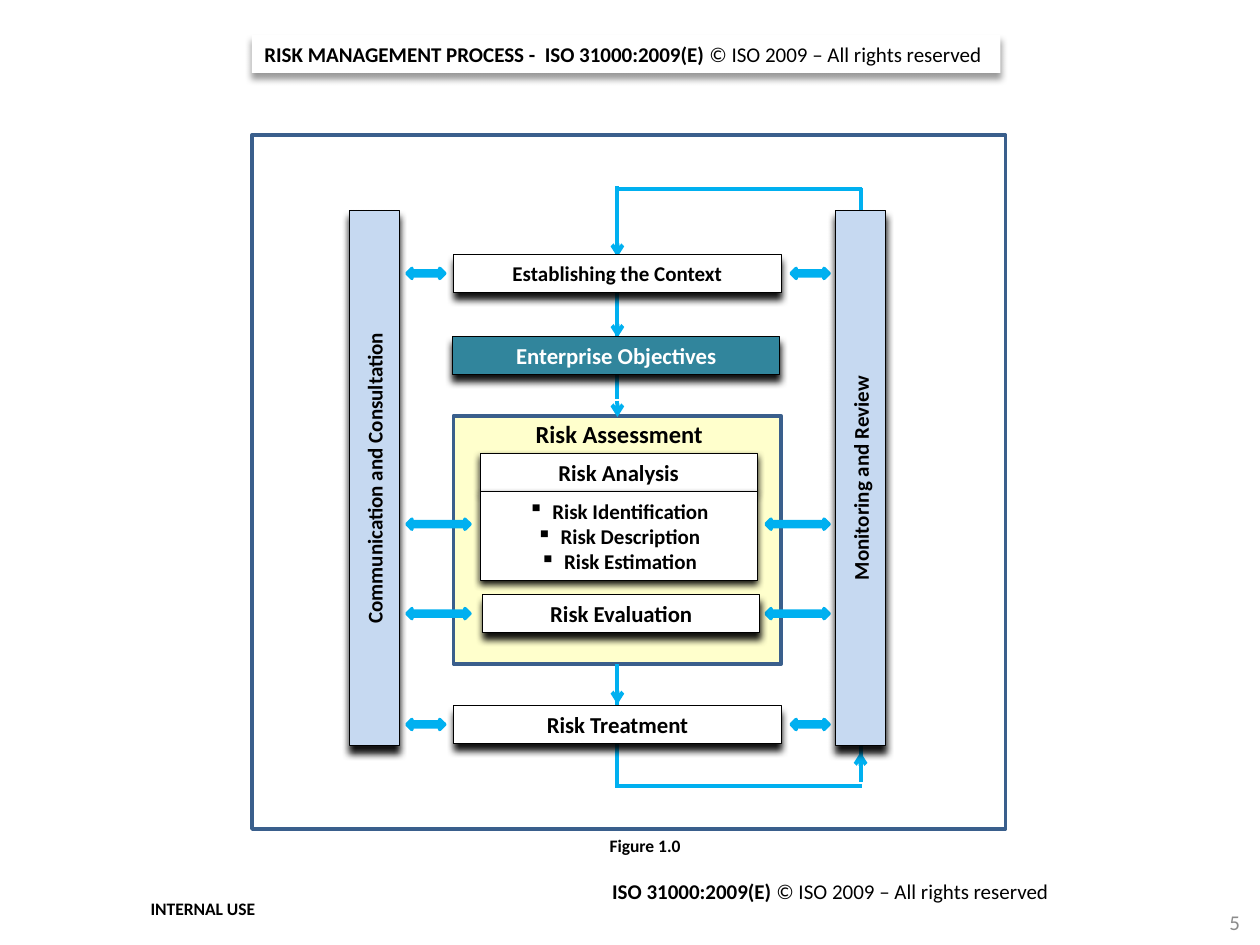
from lxml import etree
from pptx import Presentation
from pptx.dml.color import RGBColor
from pptx.enum.shapes import MSO_CONNECTOR, MSO_SHAPE
from pptx.enum.text import MSO_ANCHOR, PP_ALIGN
from pptx.oxml import parse_xml
from pptx.oxml.ns import nsdecls, qn
from pptx.util import Inches, Pt

RECT, DOUBLE_ARROW = MSO_SHAPE.RECTANGLE, MSO_SHAPE.LEFT_RIGHT_ARROW
STRAIGHT = MSO_CONNECTOR.STRAIGHT
LEFT, CENTER, RIGHT = PP_ALIGN.LEFT, PP_ALIGN.CENTER, PP_ALIGN.RIGHT
TOP, MIDDLE = MSO_ANCHOR.TOP, MSO_ANCHOR.MIDDLE

BLACK = RGBColor(0x00, 0x00, 0x00)
WHITE = RGBColor(0xFF, 0xFF, 0xFF)
GRAY = RGBColor(0x8C, 0x8C, 0x8C)
NAVY = RGBColor(0x3A, 0x5F, 0x8C)
SKY = RGBColor(0x00, 0xB0, 0xF0)
PALE_BLUE = RGBColor(0xC6, 0xD9, 0xF1)
YELLOW = RGBColor(0xFF, 0xFF, 0xCC)
TEAL = RGBColor(0x31, 0x85, 0x9C)

# Content
STANDARD = "ISO 31000:2009(E) "
RIGHTS = "© ISO 2009 – All rights reserved"
TITLE = [("RISK MANAGEMENT PROCESS -  " + STANDARD, True), (RIGHTS, False)]
SOURCE = [(STANDARD, True), (RIGHTS, False)]
ANALYSIS_STEPS = ["Risk Identification", "Risk Description", "Risk Estimation"]

# Plain labels: text, box, size, bold, colour, alignment, anchor
LABELS = [
    ("5", (7.61, 7.12, 2.33, 0.4), 12, False, GRAY, RIGHT, MIDDLE),
    ("INTERNAL USE", (0.38, 7.01, 2.46, 0.4), 10, True, BLACK, CENTER, MIDDLE),
    ("Figure 1.0", (4.52, 6.58, 1.2, 0.27), 10, True, BLACK, CENTER, TOP),
]
FRAMES = [((2, 1.07, 5.98, 5.51), WHITE), ((3.6, 3.3, 2.6, 1.97), YELLOW)]
PILLARS = [("Communication and Consultation", 2.77), ("Monitoring and Review", 6.63)]

# Process boxes: text, box, fill, font colour, size, shadow distance
STEPS = [
    ("Establishing the Context", (3.6, 2.02, 2.6, 0.3), WHITE, BLACK, 12, 4),
    ("Enterprise Objectives", (3.59, 2.67, 2.6, 0.3), TEAL, WHITE, 13, 4),
    ("Risk Analysis", (3.81, 3.6, 2.2, 0.3), WHITE, BLACK, 13, 2),
    ("Risk Evaluation", (3.83, 4.72, 2.2, 0.3), WHITE, BLACK, 13, 4),
    ("Risk Treatment", (3.6, 5.6, 2.6, 0.3), WHITE, BLACK, 13, 4),
]

# Flow lines: x1, y1, x2, y2
FLOW_X, REVIEW_X = 4.9, 6.83
LINES = [
    (FLOW_X, 1.48, FLOW_X, 3.17),
    (FLOW_X, 5.27, FLOW_X, 6.25),
    (REVIEW_X, 1.49, REVIEW_X, 6.21),
    (REVIEW_X + 0.01, 1.5, FLOW_X, 1.5),
    (REVIEW_X + 0.01, 6.24, FLOW_X, 6.24),
]
HEAD = 0.13
ARROWS = [(FLOW_X, tip - HEAD, FLOW_X, tip) for tip in (2.04, 2.68, 3.31, 5.59)]
ARROWS.append((REVIEW_X, 5.97 + HEAD, REVIEW_X, 5.97))

# Two-way arrows between the pillars: top, width
EXCHANGES = [(2.13, 0.3), (4.12, 0.5), (4.83, 0.5), (5.71, 0.3)]
EXCHANGE_LEFT, EXCHANGE_RIGHT = 3.23, 6.58


def add_shadow(sp, alpha, blur, dist):
    effects = sp._element.spPr.find(qn("a:effectLst"))
    effects.append(parse_xml(
        f'<a:outerShdw {nsdecls("a")} blurRad="{Pt(blur)}" dist="{Pt(dist)}" '
        f'dir="5400000" algn="ctr" rotWithShape="0"><a:srgbClr val="000000">'
        f'<a:alpha val="{alpha * 1000}"/></a:srgbClr></a:outerShdw>'))


def add_box(box, fill, line=None, width=0.5, kind=RECT):
    sp = s.shapes.add_shape(kind, *map(Inches, box))
    sp.shadow.inherit = False
    sp.fill.solid()
    sp.fill.fore_color.rgb = fill
    if line is None:
        sp.line.fill.background()
    else:
        sp.line.color.rgb = line
        sp.line.width = Pt(width)
    return sp


def write(sp, paragraphs, size, color=BLACK, align=CENTER, anchor=MIDDLE, wrap=True):
    """Each paragraph is a list of (text, bold) runs."""
    tf = sp.text_frame
    tf.word_wrap, tf.vertical_anchor = wrap, anchor
    font = {"name": "Calibri", "size": Pt(size)}
    for i, runs in enumerate(paragraphs):
        p = tf.paragraphs[0] if i == 0 else tf.add_paragraph()
        p.alignment = align
        for text, bold in runs:
            r = p.add_run()
            r.text = text
            r.font.color.rgb = color
            for key, value in {**font, "bold": bold}.items():
                setattr(r.font, key, value)
    return tf


def add_label(text, box, size, bold, color, align, anchor):
    sp = s.shapes.add_textbox(*map(Inches, box))
    return write(sp, [[(text, bold)]], size, color, align, anchor)


def add_line(ends, arrow=False):
    c = s.shapes.add_connector(STRAIGHT, *map(Inches, ends))
    c.line.color.rgb = SKY
    c.line.width = Pt(2.25)
    if arrow:
        etree.SubElement(c.line._get_or_add_ln(), qn("a:tailEnd"), type="arrow")
    etree.SubElement(c._element.spPr, qn("a:effectLst"))


prs = Presentation()
prs.slide_width, prs.slide_height = Inches(10), Inches(7.5)
s = prs.slides.add_slide(prs.slide_layouts[6])

# Title, source and small labels
sp = add_box((2, 0.28, 5.94, 0.3), WHITE)
add_shadow(sp, 40, 4, 3)
write(sp, [TITLE], 12, align=LEFT, anchor=TOP, wrap=False)
write(add_box((4.67, 6.92, 3.75, 0.3), WHITE), [SOURCE], 12, align=RIGHT, anchor=TOP)
for label in LABELS:
    add_label(*label)

# Frames, flow lines and two-way arrows
for box, fill in FRAMES:
    add_box(box, fill, NAVY, 2)
for ends in LINES:
    add_line(ends)
for ends in ARROWS:
    add_line(ends, arrow=True)
for top, width in EXCHANGES:
    for left in (EXCHANGE_LEFT, EXCHANGE_RIGHT - width):
        add_box((left, top, width, 0.08), SKY, SKY, 2, DOUBLE_ARROW)

# Side pillars with upward text
for text, left in PILLARS:
    sp = add_box((left, 1.67, 0.4, 4.25), PALE_BLUE, BLACK)
    add_shadow(sp, 92, 4, 4)
    tf = write(sp, [[(text, True)]], 12)
    tf._txBody.bodyPr.set("vert", "vert270")

# Process boxes
tf = add_label("Risk Assessment", (3.87, 3.34, 2.09, 0.28), 14, True, BLACK, CENTER, TOP)
tf.paragraphs[0].line_spacing = Pt(12)
for text, box, fill, color, size, dist in STEPS:
    sp = add_box(box, fill, BLACK)
    add_shadow(sp, 92, 4, dist)
    write(sp, [[(text, True)]], size, color)

# Bulleted analysis steps
sp = add_box((3.81, 3.9, 2.2, 0.71), WHITE, BLACK)
add_shadow(sp, 92, 4, 2)
tf = write(sp, [[(step, True)] for step in ANALYSIS_STEPS], 12)
for p in tf.paragraphs:
    pPr = p._p.get_or_add_pPr()
    pPr.set("marL", str(Inches(0.19)))
    pPr.set("indent", str(-Inches(0.19)))
    etree.SubElement(pPr, qn("a:buChar"), char="▪")

prs.save("out.pptx")
